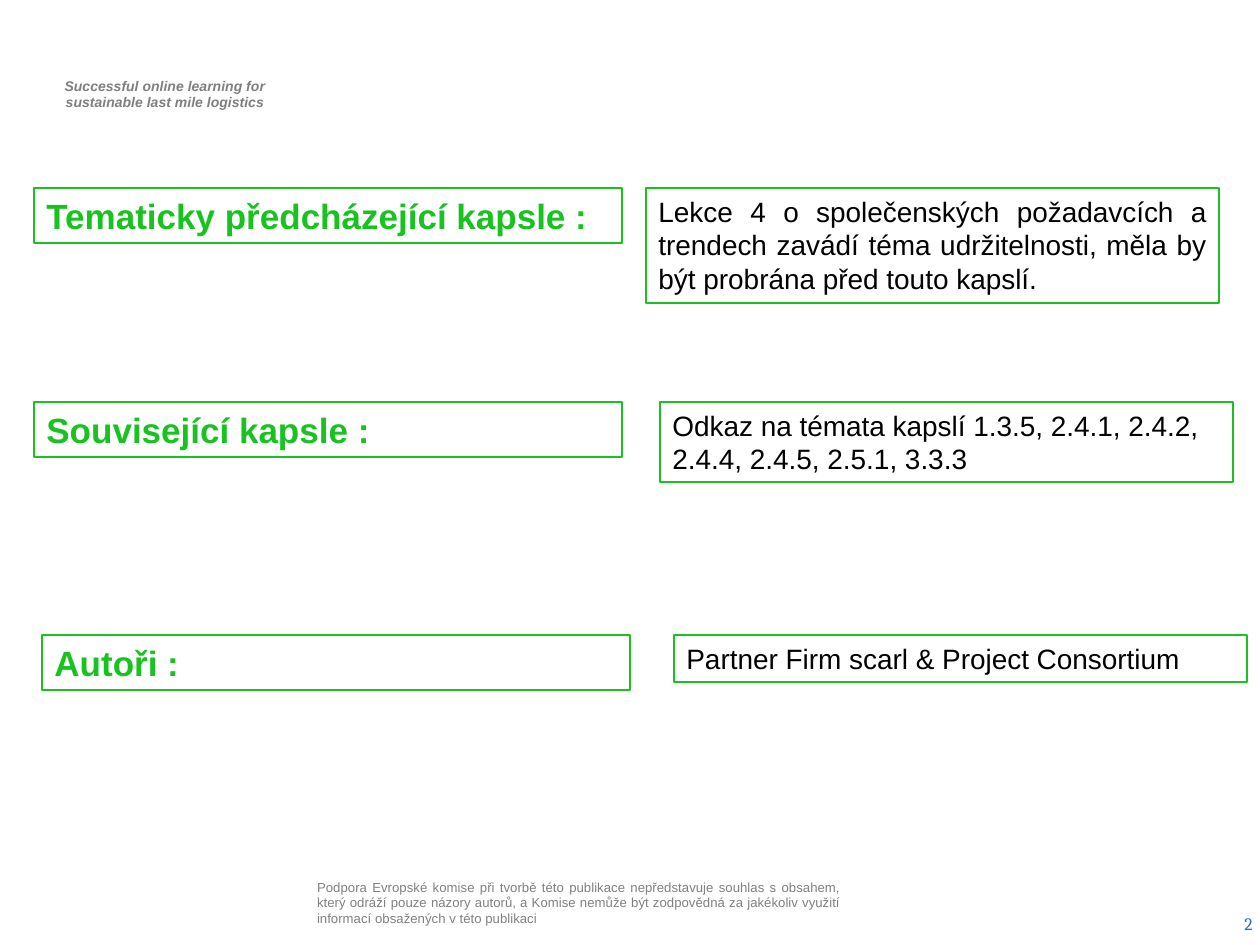
"""Build the slide listing preceding capsules, related capsules and authors."""
from pptx import Presentation
from pptx.dml.color import RGBColor
from pptx.enum.shapes import MSO_SHAPE
from pptx.enum.text import MSO_ANCHOR, PP_ALIGN
from pptx.util import Pt

PIXEL = 914400 / 126
GREEN = RGBColor(0x18, 0xC3, 0x20)
BLACK = RGBColor(0x00, 0x00, 0x00)
WHITE = RGBColor(0xFF, 0xFF, 0xFF)
DARK_GRAY = RGBColor(0x7F, 0x7F, 0x7F)
GRAY = RGBColor(0x80, 0x80, 0x80)
BLUE = RGBColor(0x33, 0x66, 0xCC)

HEADER = {"name": "Arial", "size": Pt(8), "bold": True, "italic": True}
FOOTER = {"name": "Arial", "size": Pt(7.5)}
NUMBER = {"name": "Cambria", "size": Pt(10)}
LABEL = {"name": "Arial", "size": Pt(20), "bold": True}
DETAIL = {"name": "Arial", "size": Pt(16)}


def scale(*pixels):
    return [round(pixel * PIXEL) for pixel in pixels]


def write(shape, lines, font_values, color, alignment):
    text_frame = shape.text_frame
    text_frame.word_wrap = True
    text_frame.text = "\n".join(lines)
    for paragraph in text_frame.paragraphs:
        paragraph.alignment = alignment
        for attribute, value in font_values.items():
            setattr(paragraph.font, attribute, value)
        paragraph.font.color.rgb = color


presentation = Presentation()
presentation.slide_width, presentation.slide_height = scale(1260, 945)
slide = presentation.slides.add_slide(presentation.slide_layouts[6])

header = slide.shapes.add_textbox(*scale(37, 71, 256, 47))
header_lines = ["Successful online learning for", "sustainable last mile logistics"]
write(header, header_lines, HEADER, DARK_GRAY, PP_ALIGN.CENTER)

footer = slide.shapes.add_textbox(*scale(312, 879, 533, 63))
disclaimer = (
    "Podpora Evropské komise při tvorbě této publikace nepředstavuje souhlas s obsahem, "
    "který odráží pouze názory autorů, a Komise nemůže být zodpovědná za jakékoliv "
    "využití informací obsažených v této publikaci"
)
write(footer, [disclaimer], FOOTER, GRAY, PP_ALIGN.JUSTIFY)
footer.text_frame.margin_left, footer.text_frame.margin_right = scale(5, 5)
footer.text_frame.margin_top = 0

page_number = slide.shapes.add_textbox(*scale(971, 899, 294, 50))
write(page_number, ["2"], NUMBER, BLUE, PP_ALIGN.RIGHT)
page_number.text_frame.vertical_anchor = MSO_ANCHOR.MIDDLE

previous_text = (
    "Lekce 4 o společenských požadavcích a trendech zavádí téma udržitelnosti, "
    "měla by být probrána před touto kapslí."
)
related_text = "Odkaz na témata kapslí 1.3.5, 2.4.1, 2.4.2, 2.4.4, 2.4.5, 2.5.1, 3.3.3"
authors_text = "Partner Firm scarl & Project Consortium"
rows = [
    (188, 34, "Tematicky předcházející kapsle :", 646, 115, previous_text, PP_ALIGN.JUSTIFY),
    (402, 34, "Související kapsle :", 660, 80, related_text, PP_ALIGN.LEFT),
    (635, 42, "Autoři :", 674, 47, authors_text, PP_ALIGN.LEFT),
]
for top, label_left, label, detail_left, detail_height, detail, alignment in rows:
    boxes = [
        (label_left, 588, 55, label, LABEL, GREEN, PP_ALIGN.LEFT),
        (detail_left, 573, detail_height, detail, DETAIL, BLACK, alignment),
    ]
    for left, width, height, text, font_values, color, box_alignment in boxes:
        box = slide.shapes.add_shape(MSO_SHAPE.RECTANGLE, *scale(left, top, width, height))
        box.shadow.inherit = False
        box.fill.solid()
        box.fill.fore_color.rgb = WHITE
        box.line.color.rgb = GREEN
        box.line.width = Pt(0.75)
        write(box, [text], font_values, color, box_alignment)
        box.text_frame.vertical_anchor = MSO_ANCHOR.TOP

presentation.save("out.pptx")
